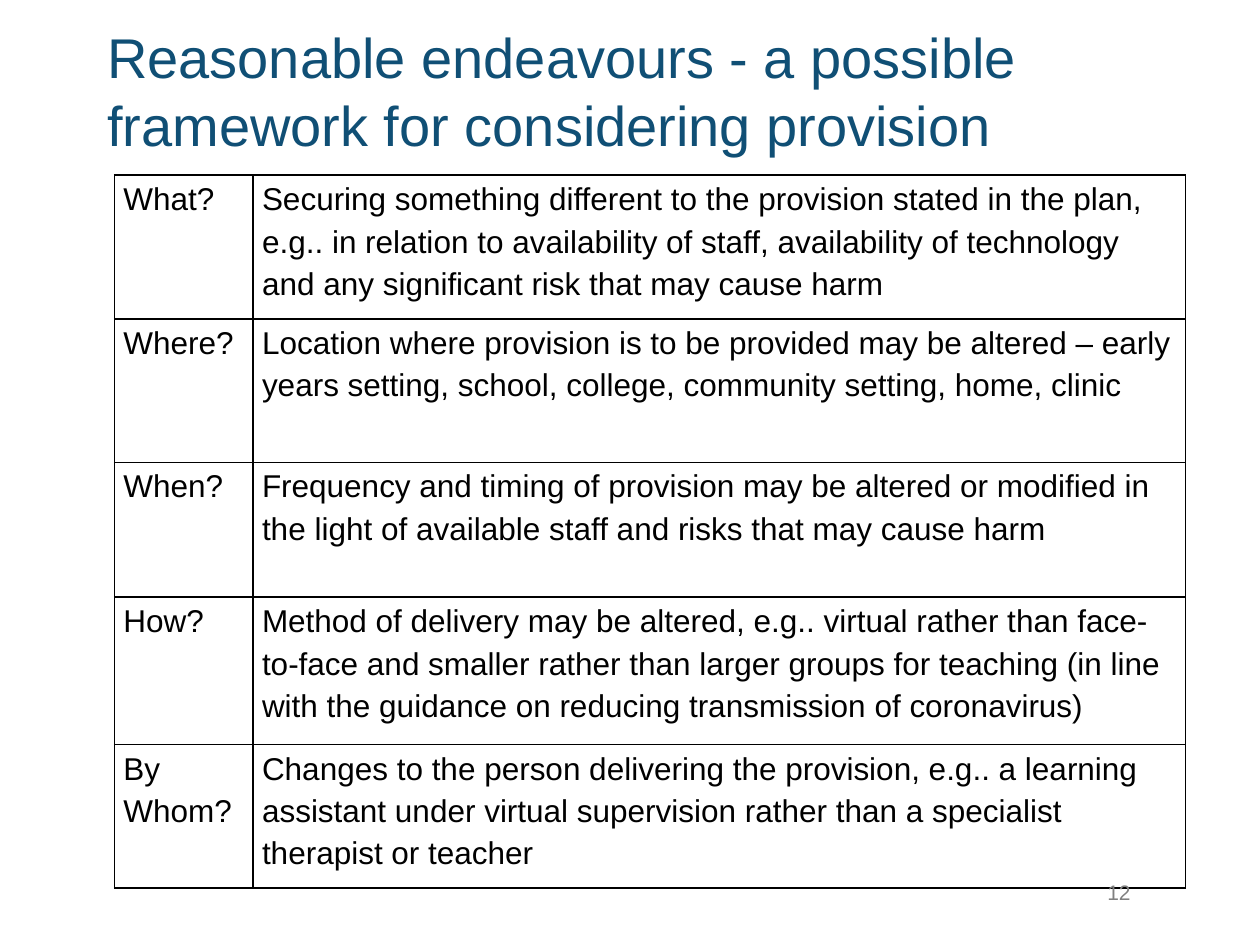
from dataclasses import dataclass

from lxml.etree import SubElement
from pptx import Presentation
from pptx.dml.color import RGBColor as Color
from pptx.enum.text import MSO_ANCHOR as Anchor, MSO_AUTO_SIZE as AutoSize, PP_ALIGN as Align
from pptx.oxml.ns import qn
from pptx.util import Emu, Pt

PX = 9144


@dataclass(frozen=True)
class Theme:
    font: str = "Arial"
    title: str = "104F75"
    ink: str = "000000"
    paper: str = "FFFFFF"
    muted: str = "808080"
    title_size: int = 32
    body_size: int = 18
    small_size: int = 12


THEME = Theme()
TITLE = "Reasonable endeavours - a possible framework for considering provision"
COLUMN_WIDTHS = (110, 740)
ROW_HEIGHTS = (114, 114, 107, 117, 114)
FRAMEWORK = (
    ("What?", "Securing something different to the provision stated in the plan, e.g.. in relation to "
              "availability of staff, availability of technology and any significant risk that may cause harm"),
    ("Where?", "Location where provision is to be provided may be altered – early years setting, school, "
               "college, community setting, home, clinic"),
    ("When?", "Frequency and timing of provision may be altered or modified in the light of available "
              "staff and risks that may cause harm"),
    ("How?", "Method of delivery may be altered, e.g.. virtual rather than face-to-face and smaller rather "
             "than larger groups for teaching (in line with the guidance on reducing transmission of "
             "coronavirus)"),
    ("By Whom?", "Changes to the person delivering the provision, e.g.. a learning assistant under virtual "
                 "supervision rather than a specialist therapist or teacher"),
)


def px(value):
    return Emu(value * PX)


def apply(target, values):
    for name, value in values.items():
        setattr(target, name, value)


def write(frame, text, size, color, **paragraph_format):
    frame.text = text
    paragraph = frame.paragraphs[0]
    apply(paragraph, {"alignment": Align.LEFT, **paragraph_format})
    apply(paragraph.font, {"name": THEME.font, "size": Pt(size)})
    paragraph.font.color.rgb = Color.from_string(color)


def add_title(slide, box):
    title = slide.shapes.title
    apply(title, dict(zip(("left", "top", "width", "height"), map(px, box))))
    apply(title.text_frame, {"word_wrap": True, "auto_size": AutoSize.NONE,
                             "vertical_anchor": Anchor.MIDDLE})
    write(title.text_frame, TITLE, THEME.title_size, THEME.title)


def add_borders(cell):
    properties = cell._tc.get_or_add_tcPr()
    for index, side in enumerate(("lnL", "lnR", "lnT", "lnB")):
        line = properties.makeelement(qn(f"a:{side}"), {"w": str(Pt(1))})
        fill = SubElement(line, qn("a:solidFill"))
        SubElement(fill, qn("a:srgbClr"), val=THEME.ink)
        properties.insert(index, line)


def add_framework(slide, box):
    table = slide.shapes.add_table(len(ROW_HEIGHTS), len(COLUMN_WIDTHS), *map(px, box)).table
    apply(table, {"first_row": False, "horz_banding": False})
    for column, width in zip(table.columns, COLUMN_WIDTHS):
        column.width = px(width)
    for row, height, texts in zip(table.rows, ROW_HEIGHTS, FRAMEWORK):
        row.height = px(height)
        for cell, text in zip(row.cells, texts):
            apply(cell, {"margin_left": px(7), "margin_right": px(7), "margin_top": 0,
                         "margin_bottom": 0, "vertical_anchor": Anchor.TOP})
            cell.fill.solid()
            cell.fill.fore_color.rgb = Color.from_string(THEME.paper)
            add_borders(cell)
            write(cell.text_frame, text, THEME.body_size, THEME.ink,
                  line_spacing=1.2, space_after=Pt(12))


def add_page_number(slide, box):
    frame = slide.shapes.add_textbox(*map(px, box)).text_frame
    frame.word_wrap = True
    write(frame, "12", THEME.small_size, THEME.muted)


def main():
    presentation = Presentation()
    apply(presentation, {"slide_width": px(1000), "slide_height": px(750)})
    slide = presentation.slides.add_slide(presentation.slide_layouts.get_by_name("Title Only"))
    add_title(slide, (75, 36, 850, 71))
    add_framework(slide, (91, 139, sum(COLUMN_WIDTHS), sum(ROW_HEIGHTS)))
    add_page_number(slide, (869, 693, 56, 40))
    presentation.save("out.pptx")


if __name__ == "__main__":
    main()
